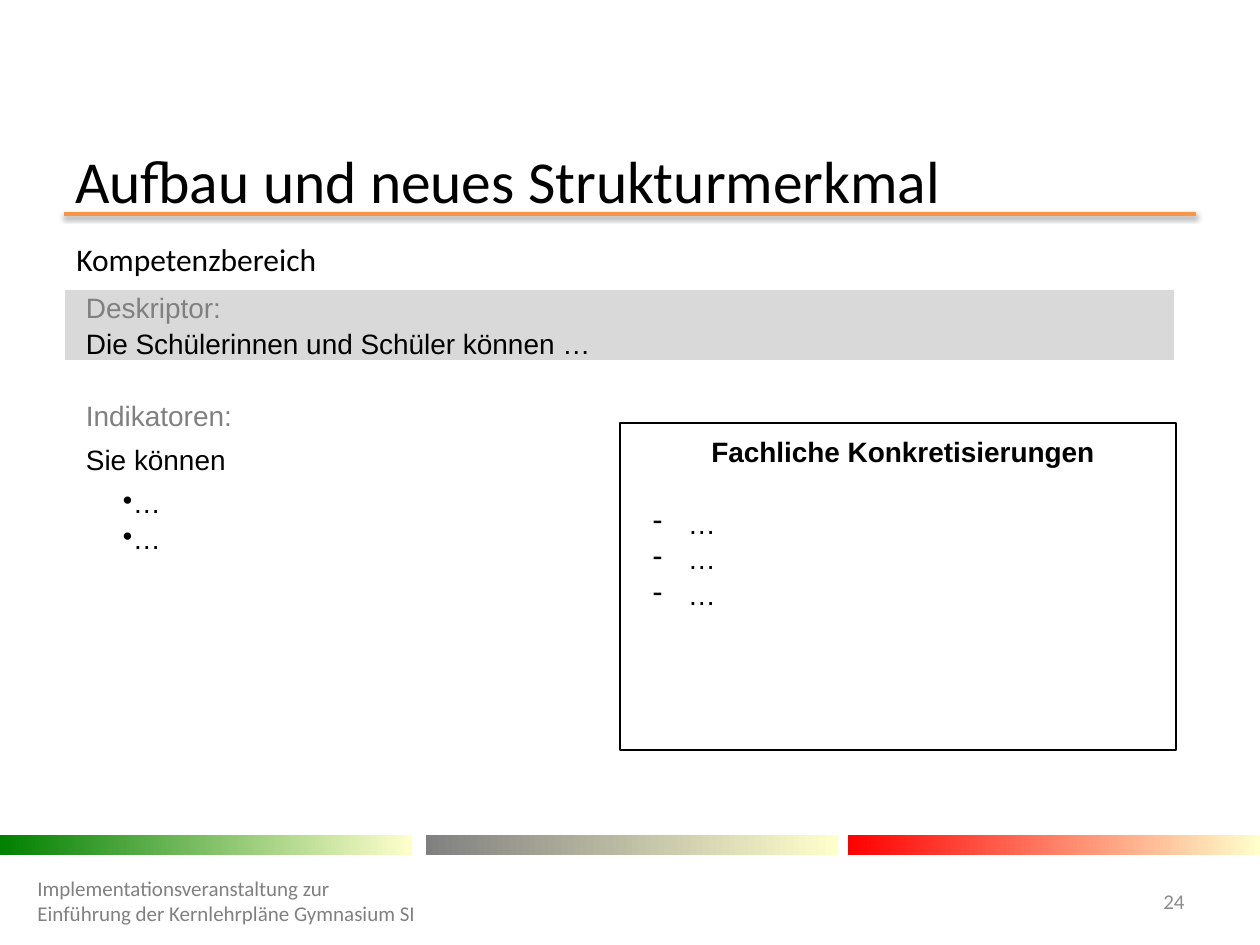
from dataclasses import dataclass
from typing import Optional

from lxml.etree import SubElement
from pptx import Presentation
from pptx.dml.color import RGBColor
from pptx.enum.shapes import MSO_CONNECTOR, MSO_SHAPE
from pptx.enum.text import MSO_ANCHOR, PP_ALIGN
from pptx.oxml.ns import qn
from pptx.util import Pt

PX = 914400 / 126
COLORS = {
    "black": "000000", "white": "FFFFFF", "gray": "808080", "number": "8C8C8C",
    "band": "D9D9D9", "orange": "F79646", "green": "008000", "red": "FF0000",
    "cream": "FFFFCC",
}


@dataclass
class Label:
    text: str
    left: int
    top: int
    width: int
    height: int
    size: int
    color: str = "black"
    anchor: MSO_ANCHOR = MSO_ANCHOR.MIDDLE
    align: PP_ALIGN = PP_ALIGN.LEFT


@dataclass
class Bar:
    left: int
    color: str


@dataclass
class Line:
    text: str
    color: str = "black"
    bold: bool = False
    align: PP_ALIGN = PP_ALIGN.LEFT
    margin: int = 13
    indent: int = 0
    bullet: Optional[str] = None
    space_before: float = 0


def px(value: int) -> int:
    return round(value * PX)


def rgb(name: str) -> RGBColor:
    return RGBColor.from_string(COLORS[name])


def style(paragraph, font: str, size: int, color: str, bold: bool = False) -> None:
    paragraph.font.name = font
    paragraph.font.size = Pt(size)
    paragraph.font.bold = bold
    paragraph.font.color.rgb = rgb(color)


def add_label(slide, label: Label) -> None:
    box = slide.shapes.add_textbox(
        px(label.left), px(label.top), px(label.width), px(label.height))
    frame = box.text_frame
    frame.word_wrap = True
    frame.vertical_anchor = label.anchor
    paragraph = frame.paragraphs[0]
    paragraph.text = label.text
    paragraph.alignment = label.align
    style(paragraph, "Calibri", label.size, label.color)


def add_bar(slide, bar: Bar) -> None:
    shape = slide.shapes.add_shape(
        MSO_SHAPE.RECTANGLE, px(bar.left), px(835), px(412), px(20))
    shape.shadow.inherit = False
    shape.line.fill.background()
    shape.fill.gradient()
    shape.fill.gradient_angle = 0
    for stop, color, position in zip(
            shape.fill.gradient_stops, (bar.color, "cream"), (0, 1)):
        stop.color.rgb = rgb(color)
        stop.position = position


def add_title_rule(slide) -> None:
    rule = slide.shapes.add_connector(
        MSO_CONNECTOR.STRAIGHT, px(64), px(214), px(1196), px(214))
    rule.line.color.rgb = rgb("orange")
    rule.line.width = Pt(2)
    effects = SubElement(rule._element.spPr, qn("a:effectLst"))
    shadow = SubElement(effects, qn("a:outerShdw"), blurRad=str(Pt(3.1)),
                        dist=str(Pt(1.6)), dir="5400000", rotWithShape="0")
    color = SubElement(shadow, qn("a:srgbClr"), val=COLORS["black"])
    SubElement(color, qn("a:alpha"), val="38000")


def fill_cell(cell, lines: list[Line], top: int = 0) -> None:
    cell.margin_left = cell.margin_right = px(9)
    cell.margin_top, cell.margin_bottom = px(top), 0
    frame = cell.text_frame
    for index, line in enumerate(lines):
        paragraph = frame.add_paragraph() if index else frame.paragraphs[0]
        paragraph.text = line.text
        paragraph.alignment = line.align
        paragraph.line_spacing = 1.15
        paragraph.space_before = Pt(line.space_before)
        properties = paragraph._p.get_or_add_pPr()
        properties.set("marL", str(px(line.margin)))
        properties.set("indent", str(px(line.indent)))
        if line.bullet:
            SubElement(properties, qn("a:buChar"), char=line.bullet)
        style(paragraph, "Arial", 16, line.color, line.bold)


def add_competence_table(slide) -> None:
    table = slide.shapes.add_table(
        3, 2, px(64), px(289), px(1111), px(538)).table
    table.first_row = table.horz_banding = False
    for column, width in zip(table.columns, (567, 544)):
        column.width = px(width)
    for row, height in zip(table.rows, (71, 36, 431)):
        row.height = px(height)
    for row, color in enumerate(("band", "white", None)):
        for column in range(2):
            fill = table.cell(row, column).fill
            if color:
                fill.solid()
                fill.fore_color.rgb = rgb(color)
            else:
                fill.background()
    for row in range(2):
        table.cell(row, 0).merge(table.cell(row, 1))

    fill_cell(table.cell(0, 0), [
        Line("Deskriptor:", "gray"),
        Line("Die Schülerinnen und Schüler können …"),
    ])
    # The empty row stays low only with a small font
    gap = table.cell(1, 0)
    gap.margin_top = gap.margin_bottom = 0
    gap.text_frame.paragraphs[0].font.size = Pt(12)

    fill_cell(table.cell(2, 0), [
        Line("Indikatoren:", "gray"),
        Line("Sie können", space_before=5),
    ] + [Line("…", indent=37, bullet="•", space_before=space) for space in (4, 0)])
    fill_cell(table.cell(2, 1), [
        Line("Fachliche Konkretisierungen", bold=True, align=PP_ALIGN.CENTER, margin=0),
    ] + [Line("…", margin=48, indent=-35, bullet="-", space_before=space)
         for space in (20.5, 0, 0)], top=36)


def add_frame(slide) -> None:
    frame = slide.shapes.add_shape(
        MSO_SHAPE.RECTANGLE, px(620), px(423), px(556), px(327))
    frame.shadow.inherit = False
    frame.fill.background()
    frame.line.color.rgb = rgb("black")
    frame.line.width = Pt(1)


def main() -> None:
    presentation = Presentation()
    presentation.slide_width, presentation.slide_height = px(1260), px(945)
    slide = presentation.slides.add_slide(presentation.slide_layouts[6])

    # Title rule and footer bars
    add_title_rule(slide)
    for bar in (Bar(0, "green"), Bar(426, "gray"), Bar(848, "red")):
        add_bar(slide, bar)

    # Table with its framed column
    add_competence_table(slide)
    add_frame(slide)

    # Title, heading and footer
    for label in (
        Label("Aufbau und neues Strukturmerkmal", 63, 155, 1134, 49, 34),
        Label("Kompetenzbereich", 64, 234, 466, 50, 18, anchor=MSO_ANCHOR.TOP),
        Label("Implementationsveranstaltung zur Einführung der Kernlehrpläne "
              "Gymnasium SI", 25, 876, 408, 50, 12, "gray"),
        Label("24", 1116, 876, 81, 50, 12, "number", align=PP_ALIGN.RIGHT),
    ):
        add_label(slide, label)

    presentation.save("out.pptx")


if __name__ == "__main__":
    main()
